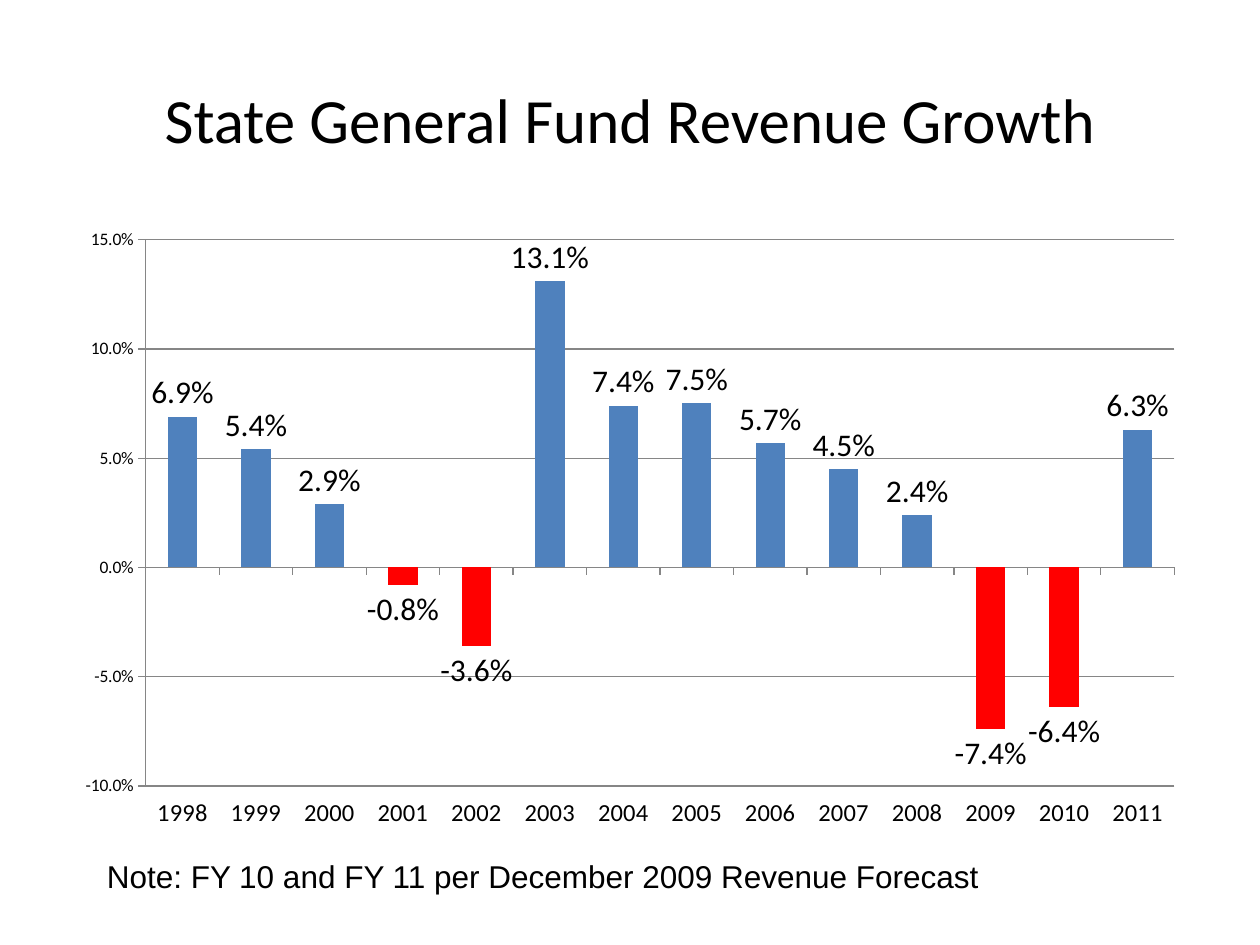
from pptx import Presentation
from pptx.chart.data import CategoryChartData
from pptx.dml.color import RGBColor
from pptx.enum.chart import XL_CHART_TYPE, XL_LABEL_POSITION, XL_TICK_LABEL_POSITION, XL_TICK_MARK
from pptx.enum.text import MSO_ANCHOR, PP_ALIGN
from pptx.util import Inches, Pt

COLUMNS = XL_CHART_TYPE.COLUMN_CLUSTERED
OUTSIDE_END = XL_LABEL_POSITION.OUTSIDE_END
LOW = XL_TICK_LABEL_POSITION.LOW
TICK_OUTSIDE = XL_TICK_MARK.OUTSIDE
TICK_NONE = XL_TICK_MARK.NONE
MIDDLE, TOP = MSO_ANCHOR.MIDDLE, MSO_ANCHOR.TOP
CENTER, LEFT = PP_ALIGN.CENTER, PP_ALIGN.LEFT

WIDTH, HEIGHT = Inches(10), Inches(7.5)
COLORS = {"text": "000000", "growth": "4F81BD", "decline": "FF0000",
          "grid": "868686", "background": "FFFFFF"}
PERCENT = "0.0%"
FIRST_YEAR = 1998
GROWTH = [0.069, 0.054, 0.029, -0.008, -0.036, 0.131, 0.074,
          0.075, 0.057, 0.045, 0.024, -0.074, -0.064, 0.063]


def color(key):
    return RGBColor.from_string(COLORS[key])


def share(left, top, width, height):
    return (int(WIDTH * left), int(HEIGHT * top),
            int(WIDTH * width), int(HEIGHT * height))


def style_font(font, size, family):
    font.size = Pt(size)
    font.name = family
    font.color.rgb = color("text")


def add_text(slide, box, words, size, family, align, anchor):
    frame = slide.shapes.add_textbox(*box).text_frame
    frame.word_wrap = True
    frame.vertical_anchor = anchor
    paragraph = frame.paragraphs[0]
    paragraph.alignment = align
    run = paragraph.add_run()
    run.text = words
    style_font(run.font, size, family)


def style_axes(chart):
    years, rates = chart.category_axis, chart.value_axis
    years.tick_label_position = LOW
    years.has_major_gridlines = False
    rates.minimum_scale, rates.maximum_scale, rates.major_unit = -0.1, 0.15, 0.05
    rates.has_major_gridlines = True
    rates.tick_labels.number_format = PERCENT
    rates.tick_labels.number_format_is_linked = False
    for axis, size in ((years, 14), (rates, 10)):
        style_font(axis.tick_labels.font, size, "Calibri")
        axis.major_tick_mark = TICK_OUTSIDE
        axis.minor_tick_mark = TICK_NONE
        axis.format.line.color.rgb = color("grid")
        axis.format.line.width = Pt(0.75)
    gridline = rates.major_gridlines.format.line
    gridline.color.rgb = color("grid")
    gridline.width = Pt(0.75)


def add_growth_chart(slide, box):
    data = CategoryChartData(number_format=PERCENT)
    data.categories = [str(FIRST_YEAR + step) for step in range(len(GROWTH))]
    data.add_series("Series 1", GROWTH)
    chart = slide.shapes.add_chart(COLUMNS, *box, data).chart
    chart.has_title = False
    chart.has_legend = False
    style_font(chart.font, 10, "Calibri")
    style_axes(chart)

    plot = chart.plots[0]
    plot.gap_width = 150
    plot.vary_by_categories = False
    bars = plot.series[0]
    bars.invert_if_negative = False
    bars.format.fill.solid()
    bars.format.fill.fore_color.rgb = color("growth")
    for index, rate in enumerate(GROWTH):
        if rate < 0:
            fill = bars.points[index].format.fill
            fill.solid()
            fill.fore_color.rgb = color("decline")

    labels = bars.data_labels
    labels.show_value = True
    labels.position = OUTSIDE_END
    labels.number_format = PERCENT
    labels.number_format_is_linked = False
    style_font(labels.font, 18, "Calibri")


def main():
    deck = Presentation()
    deck.slide_width, deck.slide_height = WIDTH, HEIGHT
    slide = deck.slides.add_slide(deck.slide_layouts[6])
    slide.background.fill.solid()
    slide.background.fill.fore_color.rgb = color("background")
    add_text(slide, share(0.05, 0.04, 0.9, 0.17),
             "State General Fund Revenue Growth", 36, "Calibri", CENTER, MIDDLE)
    add_growth_chart(slide, share(0.05, 0.23, 0.9, 0.66))
    add_text(slide, share(0.075, 0.9, 0.82, 0.06),
             "Note: FY 10 and FY 11 per December 2009 Revenue Forecast",
             18, "Arial", LEFT, TOP)
    deck.save("out.pptx")


if __name__ == "__main__":
    main()
